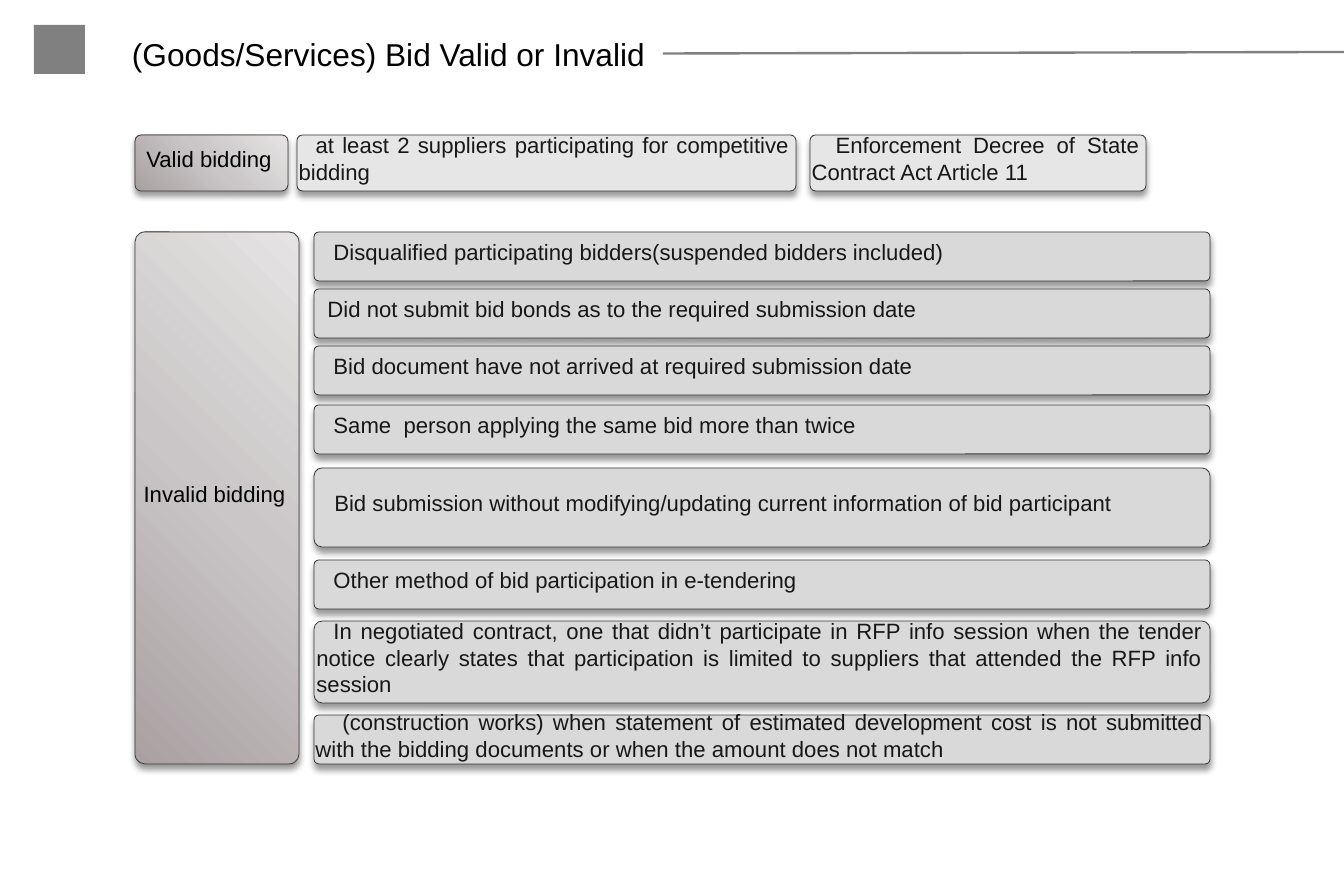
import pptx
import pptx.dml.color
import pptx.enum.shapes
import pptx.enum.text
import pptx.oxml
import pptx.oxml.ns
import pptx.util
from dataclasses import dataclass

PAGE_WIDTH, PAGE_HEIGHT = 1344, 896
EMU_PER_PIXEL = 10801350 / PAGE_WIDTH


@dataclass(frozen=True)
class Theme:
    font: str = "Arial"
    title_size: int = 20
    body_size: int = 14
    black: str = "000000"
    body_text: str = "181717"
    accent: str = "808080"
    outline: str = "3B3838"
    valid_fill: str = "E7E6E6"
    invalid_fill: str = "D9D9D9"
    label_stops: tuple = ((0, "A9A0A2"), (50, "CAC6C7"), (100, "E5E3E3"))


THEME = Theme()
ALIGN = pptx.enum.text.PP_ALIGN

# Top, height, first-line indent and wording of each cause of invalidity
INVALID_CAUSES = [
    (232, 49, 18, "Disqualified participating bidders(suspended bidders included)"),
    (289, 49, 12, "Did not submit bid bonds as to the required submission date"),
    (346, 49, 18, "Bid document have not arrived at required submission date"),
    (405, 49, 18, "Same  person applying the same bid more than twice"),
    (468, 79, 18, "Bid submission without modifying/updating current information "
                  "of bid participant"),
    (560, 49, 18, "Other method of bid participation in e-tendering"),
    (621, 82, 17, "In negotiated contract, one that didn’t participate in RFP info session "
                  "when the tender notice clearly states that participation is limited to "
                  "suppliers that attended the RFP info session"),
    (715, 49, 27, "(construction works) when statement of estimated development cost is not "
                  "submitted with the bidding documents or when the amount does not match"),
]


def px(length):
    return pptx.util.Emu(round(length * EMU_PER_PIXEL))


def rgb(code):
    return pptx.dml.color.RGBColor.from_string(code)


def write(shape, text, size, color, align, margins, indent=0):
    frame = shape.text_frame
    (frame.margin_left, frame.margin_top,
     frame.margin_right, frame.margin_bottom) = map(px, margins)
    para = frame.paragraphs[0]
    para.text = text
    para.alignment = align
    para.font.name = THEME.font
    para.font.size = pptx.util.Pt(size)
    para.font.color.rgb = rgb(color)
    if indent:
        para._p.get_or_add_pPr().set("indent", str(px(indent)))


def add_drop_shadow(shape):
    shape.shadow.inherit = False
    effects = shape._element.spPr.find(pptx.oxml.ns.qn("a:effectLst"))
    effects.append(pptx.oxml.parse_xml(
        f'<a:outerShdw {pptx.oxml.ns.nsdecls("a")} blurRad="50800" dist="38100" '
        'dir="5400000" algn="t" rotWithShape="0"><a:srgbClr val="000000">'
        '<a:alpha val="40000"/></a:srgbClr></a:outerShdw>'))


def fill_label(shape):
    stops = "".join(f'<a:gs pos="{position * 1000}"><a:srgbClr val="{color}"/></a:gs>'
                    for position, color in THEME.label_stops)
    gradient = pptx.oxml.parse_xml(
        f'<a:gradFill {pptx.oxml.ns.nsdecls("a")} rotWithShape="1"><a:gsLst>{stops}</a:gsLst>'
        '<a:lin ang="18900000" scaled="0"/></a:gradFill>')
    shape._element.spPr.find(pptx.oxml.ns.qn("a:prstGeom")).addnext(gradient)


def add_box(page, left, top, width, height, corner):
    box = page.shapes.add_shape(pptx.enum.shapes.MSO_SHAPE.ROUNDED_RECTANGLE,
                                px(left), px(top), px(width), px(height))
    box.adjustments[0] = corner
    box.line.color.rgb = rgb(THEME.outline)
    box.line.width = pptx.util.Pt(0.5)
    box.text_frame.word_wrap = True
    box.text_frame.vertical_anchor = pptx.enum.text.MSO_ANCHOR.MIDDLE
    add_drop_shadow(box)
    return box


def add_label(page, left, top, width, height, corner, text):
    box = add_box(page, left, top, width, height, corner)
    fill_label(box)
    write(box, text, THEME.body_size, THEME.black, ALIGN.CENTER, (0, 0, 5, 9))


def add_bar(page, left, top, width, height, fill, indent, text):
    box = add_box(page, left, top, width, height, 0.1)
    box.fill.solid()
    box.fill.fore_color.rgb = rgb(fill)
    write(box, text, THEME.body_size, THEME.body_text, ALIGN.JUSTIFY, (0, 0, 5, 9), indent)


def add_header(page, text):
    title = page.shapes.add_textbox(px(119), px(28), px(544), px(51))
    title.text_frame.word_wrap = False
    title.text_frame.auto_size = pptx.enum.text.MSO_AUTO_SIZE.SHAPE_TO_FIT_TEXT
    write(title, text, THEME.title_size, THEME.black, ALIGN.LEFT, (13, 7, 13, 7))

    rule = page.shapes.add_connector(pptx.enum.shapes.MSO_CONNECTOR.STRAIGHT,
                                     px(663), px(54), px(PAGE_WIDTH), px(52))
    rule.begin_connect(title, 3)
    rule.line.color.rgb = rgb(THEME.accent)
    rule.line.width = pptx.util.Pt(1.5)
    rule._element.spPr.append(pptx.oxml.parse_xml(
        f'<a:effectLst {pptx.oxml.ns.nsdecls("a")}/>'))

    marker = page.shapes.add_shape(pptx.enum.shapes.MSO_SHAPE.RECTANGLE,
                                   px(34), px(25), px(51), px(49))
    marker.shadow.inherit = False
    marker.fill.solid()
    marker.fill.fore_color.rgb = rgb(THEME.accent)
    marker.line.fill.background()


def main():
    deck = pptx.Presentation()
    deck.slide_width, deck.slide_height = px(PAGE_WIDTH), px(PAGE_HEIGHT)
    page = deck.slides.add_slide(deck.slide_layouts[6])

    add_header(page, "(Goods/Services) Bid Valid or Invalid")

    # Valid bidding: condition and legal basis
    add_label(page, 135, 135, 153, 56, 0.11, "Valid bidding")
    add_bar(page, 297, 135, 499, 56, THEME.valid_fill, 17,
            "at least 2 suppliers participating for competitive bidding")
    add_bar(page, 810, 135, 336, 56, THEME.valid_fill, 24,
            "Enforcement Decree of State Contract Act Article 11")

    # Invalid bidding: list of causes
    add_label(page, 135, 232, 164, 532, 0.06, "Invalid bidding")
    for top, height, indent, text in INVALID_CAUSES:
        add_bar(page, 314, top, 896, height, THEME.invalid_fill, indent, text)

    deck.save("out.pptx")


if __name__ == "__main__":
    main()
